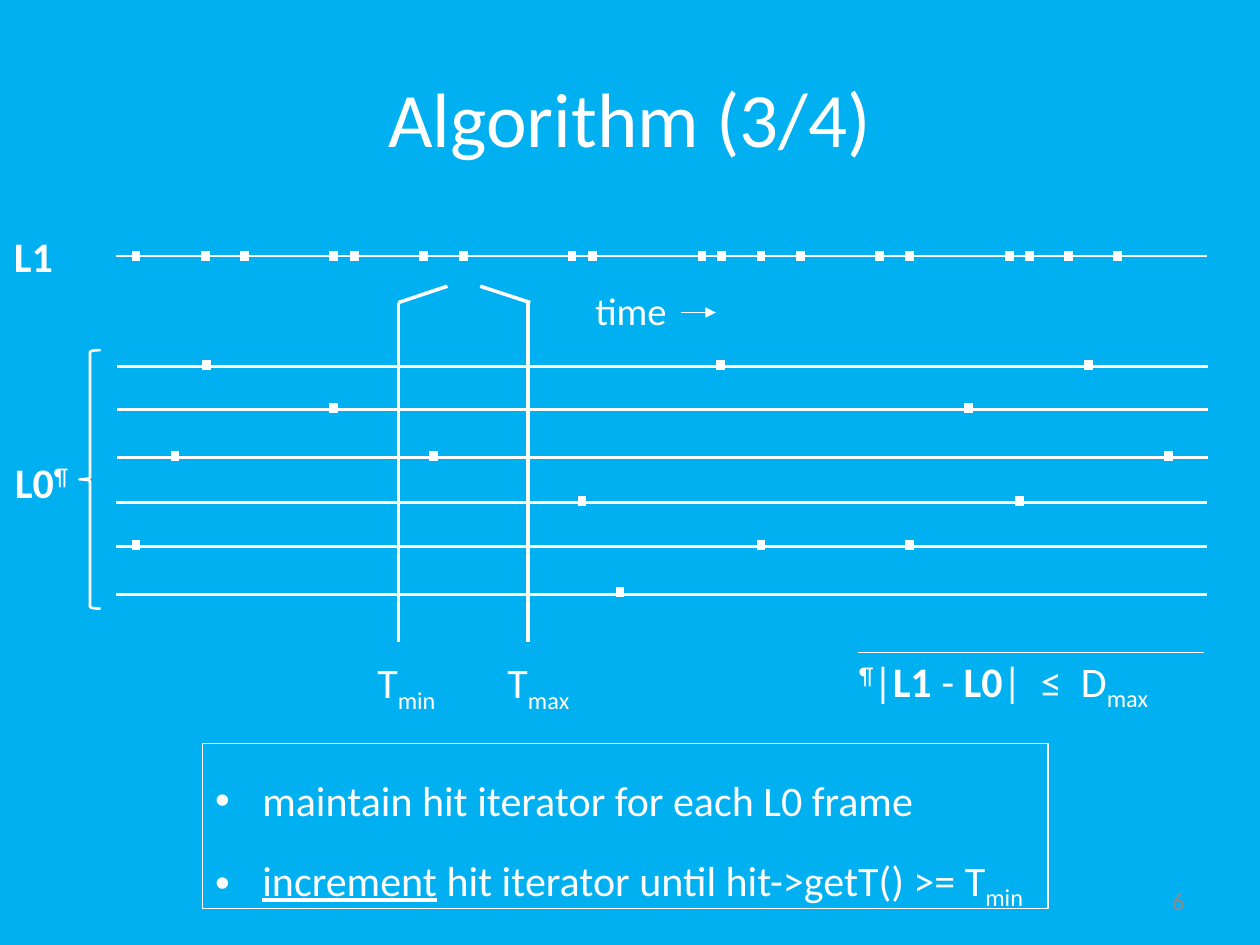
from dataclasses import dataclass

from lxml.etree import SubElement
from pptx import Presentation
from pptx.dml.color import RGBColor
from pptx.enum.shapes import MSO_CONNECTOR, MSO_SHAPE
from pptx.enum.text import MSO_ANCHOR, MSO_AUTO_SIZE, PP_ALIGN
from pptx.oxml.ns import qn
from pptx.util import Cm, Pt


@dataclass(frozen=True)
class Theme:
    back: RGBColor = RGBColor(0x00, 0xB0, 0xF0)
    ink: RGBColor = RGBColor(0xFF, 0xFF, 0xFF)
    gray: RGBColor = RGBColor(0x8C, 0x8C, 0x8C)
    font: str = "Calibri"
    title: float = 44
    body: float = 24
    time: float = 22
    page: float = 14
    thin: float = 0.75
    track: float = 1.5
    gate: float = 2
    hit: float = 5


@dataclass(frozen=True)
class Run:
    text: str
    bold: bool = False
    under: bool = False
    shift: int = 0  # baseline shift in percent


@dataclass(frozen=True)
class Track:
    left: float
    y: float
    lift: float  # how far hits sit above the line
    hits: tuple[float, ...]


@dataclass(frozen=True)
class Label:
    box: tuple[float, float, float, float]
    runs: tuple[Run, ...]
    align: PP_ALIGN = PP_ALIGN.LEFT
    size: float = 24


THEME = Theme()
SPAN = 22  # length of a track
TICK = 0.2  # height of a hit
SUP, SUB = 30, -25

TRACKS = (
    Track(2.34, 5.16, 0, (2.74, 4.14, 4.93, 6.73, 7.14, 8.53, 9.35, 11.53, 11.94, 14.15,
                          14.55, 15.34, 16.13, 17.73, 18.34, 20.35, 20.75, 21.54, 22.53)),
    Track(2.36, 7.39, 0.03, (4.17, 14.53, 21.95)),
    Track(2.36, 8.26, 0.03, (6.73, 19.53)),
    Track(2.36, 9.22, 0.03, (3.53, 8.74, 23.55)),
    Track(2.34, 10.13, 0.03, (11.73, 20.55)),
    Track(2.34, 11.02, 0.03, (2.74, 15.34, 18.34)),
    Track(2.34, 11.99, 0.05, (12.5,)),
)

GATES = (
    (9.02, 5.77, 8.03, 6.1),
    (9.68, 5.77, 10.69, 6.1),
    (8.03, 6.1, 8.03, 12.95),
    (10.64, 6.1, 10.64, 12.95),
)

LABELS = (
    Label((0.03, 4.52, 1.3, 1.27), (Run("L1", bold=True),)),
    Label((0.05, 9.07, 1.65, 1.27), (Run("L0", bold=True), Run("¶", shift=SUP))),
    Label((7.32, 13.11, 1.75, 1.27), (Run("T"), Run("min", shift=SUB)), PP_ALIGN.CENTER),
    Label((9.93, 13.11, 1.85, 1.27), (Run("T"), Run("max", shift=SUB)), PP_ALIGN.CENTER),
    Label((11.73, 5.66, 1.98, 1.19), (Run("time"),), PP_ALIGN.CENTER, THEME.time),
    Label((17.07, 13.08, 6.73, 1.27),
          (Run("¶", shift=SUP), Run("|"), Run("L1", bold=True), Run(" - "),
           Run("L0", bold=True), Run("|  ≤  D"), Run("max", shift=SUB))),
)

STEPS = (
    (Run("maintain hit iterator for each L0 frame"),),
    (Run("increment", under=True), Run(" hit iterator until hit->getT() >= T"),
     Run("min", shift=SUB)),
)


def write(para, runs: tuple[Run, ...], size: float, color: RGBColor = THEME.ink) -> None:
    for part in runs:
        run = para.add_run()
        run.text = part.text
        font = run.font
        font.name, font.size, font.bold = THEME.font, Pt(size), part.bold
        font.underline = part.under
        font.color.rgb = color
        if part.shift:
            run._r.get_or_add_rPr().set("baseline", str(part.shift * 1000))


def line(slide, x1: float, y1: float, x2: float, y2: float, width: float):
    link = slide.shapes.add_connector(
        MSO_CONNECTOR.STRAIGHT, Cm(x1), Cm(y1), Cm(x2), Cm(y2))
    link.line.color.rgb = THEME.ink
    link.line.width = Pt(width)
    SubElement(link._element.spPr, qn("a:effectLst"))
    return link


def draw(slide, track: Track) -> None:
    line(slide, track.left, track.y, track.left + SPAN, track.y, THEME.track)
    mid = track.y - track.lift
    for x in track.hits:
        line(slide, x, mid - TICK / 2, x, mid + TICK / 2, THEME.hit)


def label(slide, item: Label) -> None:
    frame = slide.shapes.add_textbox(*map(Cm, item.box)).text_frame
    frame.word_wrap = False
    frame.auto_size = MSO_AUTO_SIZE.SHAPE_TO_FIT_TEXT
    para = frame.paragraphs[0]
    para.alignment = item.align
    write(para, item.runs, item.size)


def outline(slide, kind: MSO_SHAPE, box: tuple[float, ...], width: float):
    shape = slide.shapes.add_shape(kind, *map(Cm, box))
    shape.shadow.inherit = False
    shape.fill.background()
    shape.line.color.rgb = THEME.ink
    shape.line.width = Pt(width)
    return shape


def steps(slide) -> None:
    box = outline(slide, MSO_SHAPE.RECTANGLE, (4.09, 14.99, 17.04, 3.33), THEME.thin)
    frame = box.text_frame
    frame.word_wrap = False
    frame.vertical_anchor = MSO_ANCHOR.TOP
    for i, runs in enumerate(STEPS):
        para = frame.add_paragraph() if i else frame.paragraphs[0]
        para.alignment = PP_ALIGN.LEFT
        para.line_spacing = 1.5
        props = para._p.get_or_add_pPr()
        props.set("marL", str(Cm(0.95)))
        props.set("indent", str(-Cm(0.95)))
        SubElement(props, qn("a:buFont")).set("typeface", "Arial")
        SubElement(props, qn("a:buChar")).set("char", "•")
        write(para, runs, THEME.body)


def main() -> None:
    deck = Presentation()
    deck.slide_width, deck.slide_height = Cm(25.4), Cm(19.05)
    slide = deck.slides.add_slide(deck.slide_layouts[5])
    slide.background.fill.solid()
    slide.background.fill.fore_color.rgb = THEME.back

    # Title
    title = slide.shapes.title
    title.left, title.top, title.width, title.height = map(Cm, (1.27, 0.76, 22.86, 3.18))
    title.text_frame.vertical_anchor = MSO_ANCHOR.MIDDLE
    head = title.text_frame.paragraphs[0]
    head.alignment = PP_ALIGN.CENTER
    write(head, (Run("Algorithm (3/4)"),), THEME.title)

    # Page number
    page = slide.shapes.add_textbox(Cm(18.21), Cm(17.65), Cm(5.92), Cm(1.02)).text_frame
    page.word_wrap = True
    page.vertical_anchor = MSO_ANCHOR.MIDDLE
    page.paragraphs[0].alignment = PP_ALIGN.RIGHT
    write(page.paragraphs[0], (Run("6"),), THEME.page, THEME.gray)

    # Hit tracks and the time window across them
    for track in TRACKS:
        draw(slide, track)
    for ends in GATES:
        line(slide, *ends, THEME.gate)
    outline(slide, MSO_SHAPE.LEFT_BRACE, (1.6, 7.06, 0.43, 5.21), THEME.track)

    # Labels, time arrow and footnote rule
    for item in LABELS:
        label(slide, item)
    arrow = line(slide, 13.72, 6.3, 14.43, 6.3, THEME.thin)
    SubElement(arrow.line._get_or_add_ln(), qn("a:tailEnd")).set("type", "triangle")
    line(slide, 17.3, 13.16, 24.28, 13.16, THEME.thin)

    # Steps of the algorithm
    steps(slide)
    deck.save("out.pptx")


if __name__ == "__main__":
    main()
